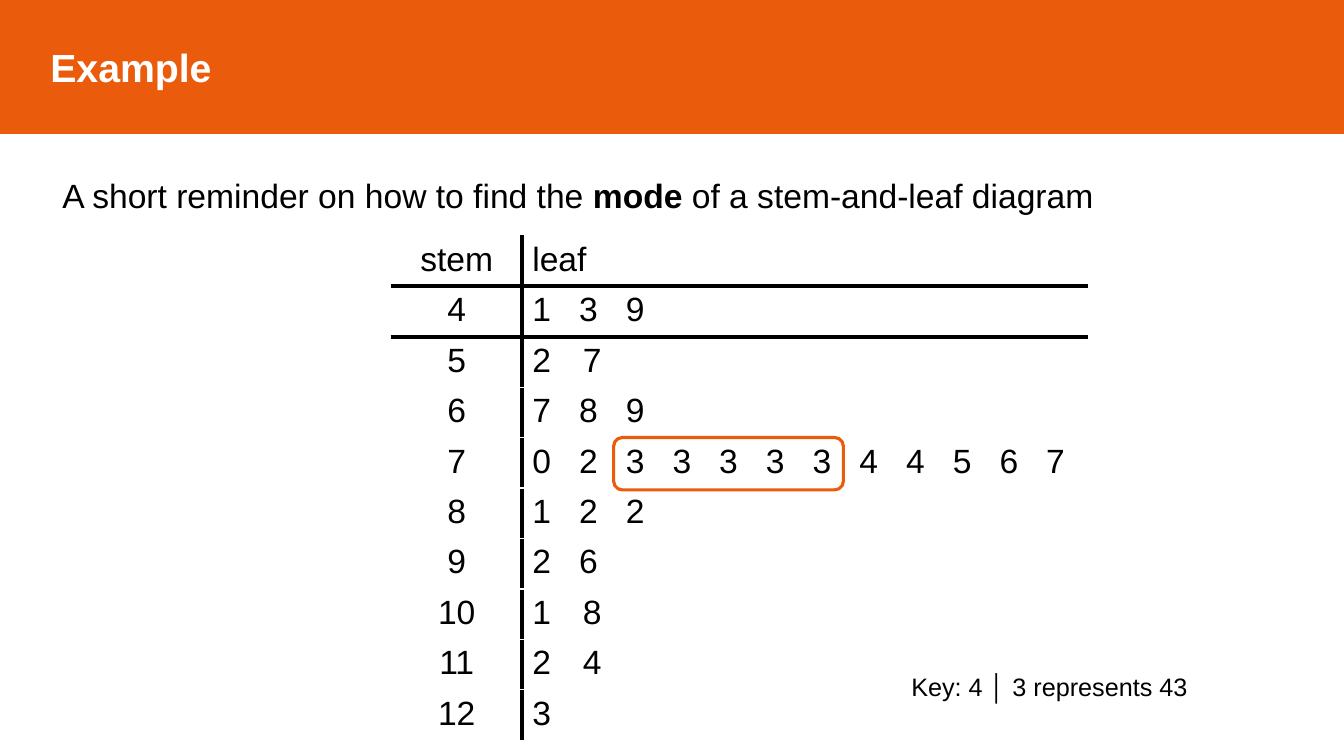
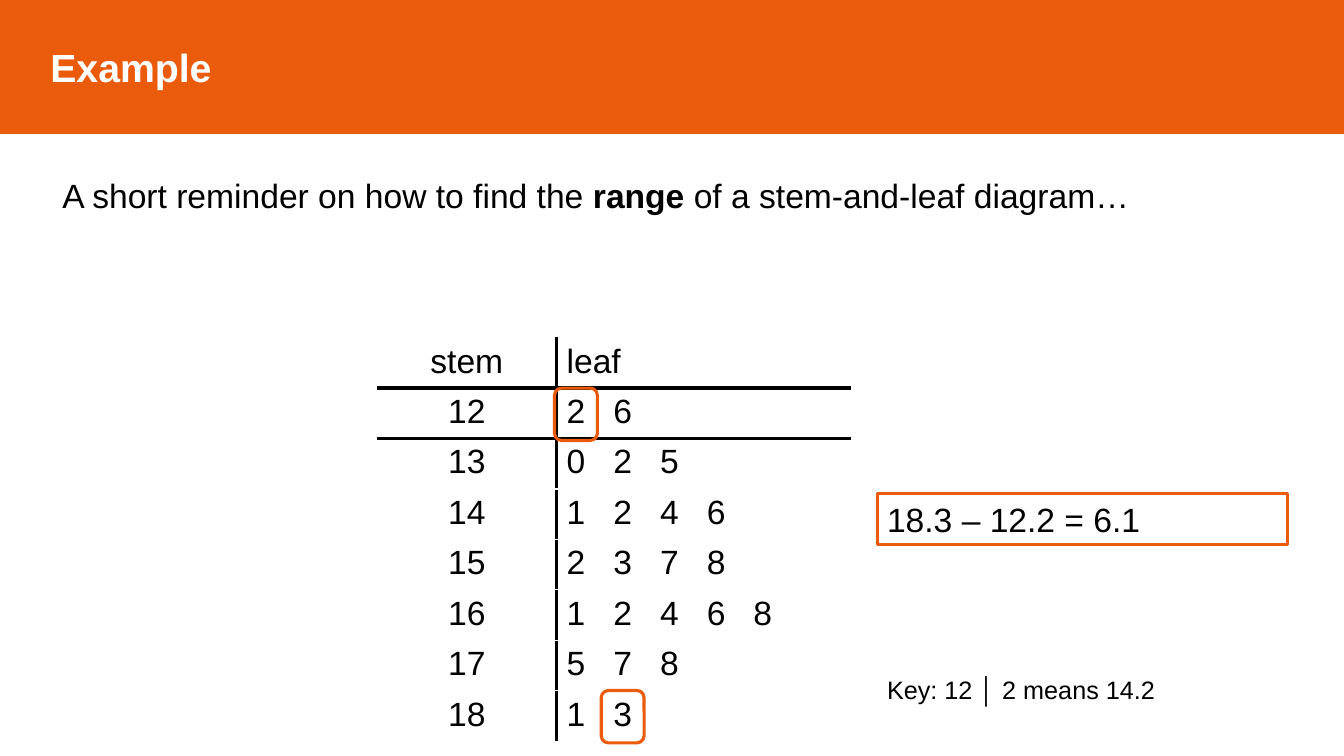
from pptx import Presentation
from pptx.dml.color import RGBColor
from pptx.enum.shapes import MSO_SHAPE
from pptx.enum.text import MSO_ANCHOR, MSO_AUTO_SIZE, PP_ALIGN
from pptx.util import Inches, Pt
from pptx.oxml.ns import qn
from lxml.etree import SubElement

# Content: each row is a stem, its leaves and, where it differs, the leaf gap
WIDE = 0.5
SLIDES = [
    dict(
        title="Example",
        intro=("A short reminder on how to find the ", "mode ",
               "of a stem-and-leaf diagram"),
        place=(3.88, 2.34), cols=(1.3, 5.61),
        rows=[("4", "139"), ("5", "27", WIDE), ("6", "789"),
              ("7", "023333344567"), ("8", "122"), ("9", "26"),
              ("10", "18", WIDE), ("11", "24", WIDE), ("12", "3")],
        rings=[(4, 2, 5)],  # row, first leaf, number of leaves
        key=("Key: 4 │ 3 represents 43", 8.94, 6.61),
    ),
    dict(
        title="Example",
        intro=("A short reminder on how to find the ", "range ",
               "of a stem-and-leaf diagram…"),
        place=(3.74, 3.35), cols=(1.78, 2.91),
        rows=[("12", "26"), ("13", "025"), ("14", "1246"), ("15", "2378"),
              ("16", "12468"), ("17", "578"), ("18", "13")],
        rings=[(1, 0, 1), (7, 1, 1)],
        key=("Key: 12 │ 2 means 14.2", 8.7, 6.64),
        answer=("18.3 – 12.2 = 6.1", 8.7, 4.9),
    ),
]

# Shared style
HUES = {"brand": "EA5B0C", "ink": "000000", "paper": "FFFFFF"}
FONT, BODY = "Arial", 24
WIDTH, HEIGHT, BAND = 13.33, 7.5, 1.32
ROW, INSET, PAD = 0.5, 0.1, 0.12
DIGIT = 0.556 * BODY / 72             # width of one Arial digit
PITCH = DIGIT + 3 * 0.278 * BODY / 72  # digit and three space widths


def hue(name):
    return RGBColor.from_string(HUES[name])


def write(para, text, size=BODY, color="ink", bold=False):
    run = para.add_run()
    run.text = text
    font = run.font
    font.name, font.size, font.bold = FONT, Pt(size), bold
    font.color.rgb = hue(color)


def edge(cell, side, width=3):
    """Draw one black cell border; call in the order L, R, T, B."""
    line = SubElement(cell._tc.get_or_add_tcPr(), qn(f"a:ln{side}"),
                      w=str(Pt(width)))
    fill = SubElement(line, qn("a:solidFill"))
    SubElement(fill, qn("a:srgbClr"), val=HUES["ink"])


def stops(para, gap, count):
    tabs = SubElement(para._p.get_or_add_pPr(), qn("a:tabLst"))
    for i in range(1, count):
        SubElement(tabs, qn("a:tab"), pos=str(Inches(gap * i)), algn="l")


def add_band(slide, text):
    band = slide.shapes.title
    band.left, band.top = 0, 0
    band.width, band.height = Inches(WIDTH), Inches(BAND)
    band.fill.solid()
    band.fill.fore_color.rgb = hue("brand")
    band.line.color.rgb = hue("brand")
    band.line.width = Pt(1)
    frame = band.text_frame
    frame.auto_size = MSO_AUTO_SIZE.NONE
    frame.vertical_anchor = MSO_ANCHOR.MIDDLE
    frame.margin_left = Inches(0.5)
    para = frame.paragraphs[0]
    para.alignment = PP_ALIGN.LEFT
    write(para, text, 28, "paper", True)


def add_text(slide, x, y, w, h, parts, size=BODY):
    """Add a line of text in which every second part is bold."""
    box = slide.shapes.add_textbox(*map(Inches, (x, y, w, h)))
    box.text_frame.word_wrap = True
    for i, part in enumerate(parts):
        write(box.text_frame.paragraphs[0], part, size, bold=i % 2 == 1)
    return box


def outline(shape):
    shape.line.color.rgb = hue("brand")
    shape.line.width = Pt(2.25)


def add_plot(slide, place, cols, rows):
    """Add the stem-and-leaf table."""
    count = len(rows) + 1
    size = (sum(cols), ROW * count)
    frame = slide.shapes.add_table(count, 2, *map(Inches, place + size))
    table = frame.table
    table.first_row = table.horz_banding = False
    for col, width in zip(table.columns, cols):
        col.width = Inches(width)
    for r, (stem, leaves, *gap) in enumerate([("stem", ["leaf"])] + rows):
        table.rows[r].height = Inches(ROW)
        left, right = table.cell(r, 0), table.cell(r, 1)
        for cell, side in ((left, "R"), (right, "L")):
            edge(cell, side)
            if r == 1:
                edge(cell, "T")
            if r == 0:
                edge(cell, "B")
            cell.fill.background()
        para = left.text_frame.paragraphs[0]
        para.alignment = PP_ALIGN.CENTER
        write(para, stem)
        para = right.text_frame.paragraphs[0]
        stops(para, gap[0] if gap else PITCH, len(leaves))
        write(para, "\t".join(leaves))


def add_ring(slide, place, stem, row, first, count):
    """Outline some neighbouring leaves of one row."""
    x = place[0] + stem + INSET + first * PITCH - PAD
    y = place[1] + row * ROW
    w = (count - 1) * PITCH + DIGIT + 2 * PAD
    ring = slide.shapes.add_shape(MSO_SHAPE.ROUNDED_RECTANGLE,
                                  *map(Inches, (x, y, w, ROW + 0.02)))
    ring.shadow.inherit = False
    ring.fill.background()
    outline(ring)


def main():
    deck = Presentation()
    deck.slide_width, deck.slide_height = Inches(WIDTH), Inches(HEIGHT)
    for item in SLIDES:
        slide = deck.slides.add_slide(deck.slide_layouts[5])
        place, cols = item["place"], item["cols"]
        add_band(slide, item["title"])
        add_text(slide, 0.52, 1.69, 12.25, 0.5, item["intro"])
        add_plot(slide, place, cols, item["rows"])
        text, x, y = item["key"]
        add_text(slide, x, y, 4.17, 0.4, [text], 18)
        for ring in item["rings"]:
            add_ring(slide, place, cols[0], *ring)
        if "answer" in item:
            text, x, y = item["answer"]
            outline(add_text(slide, x, y, 4.07, 0.5, [text]))
    deck.save("out.pptx")


if __name__ == "__main__":
    main()
